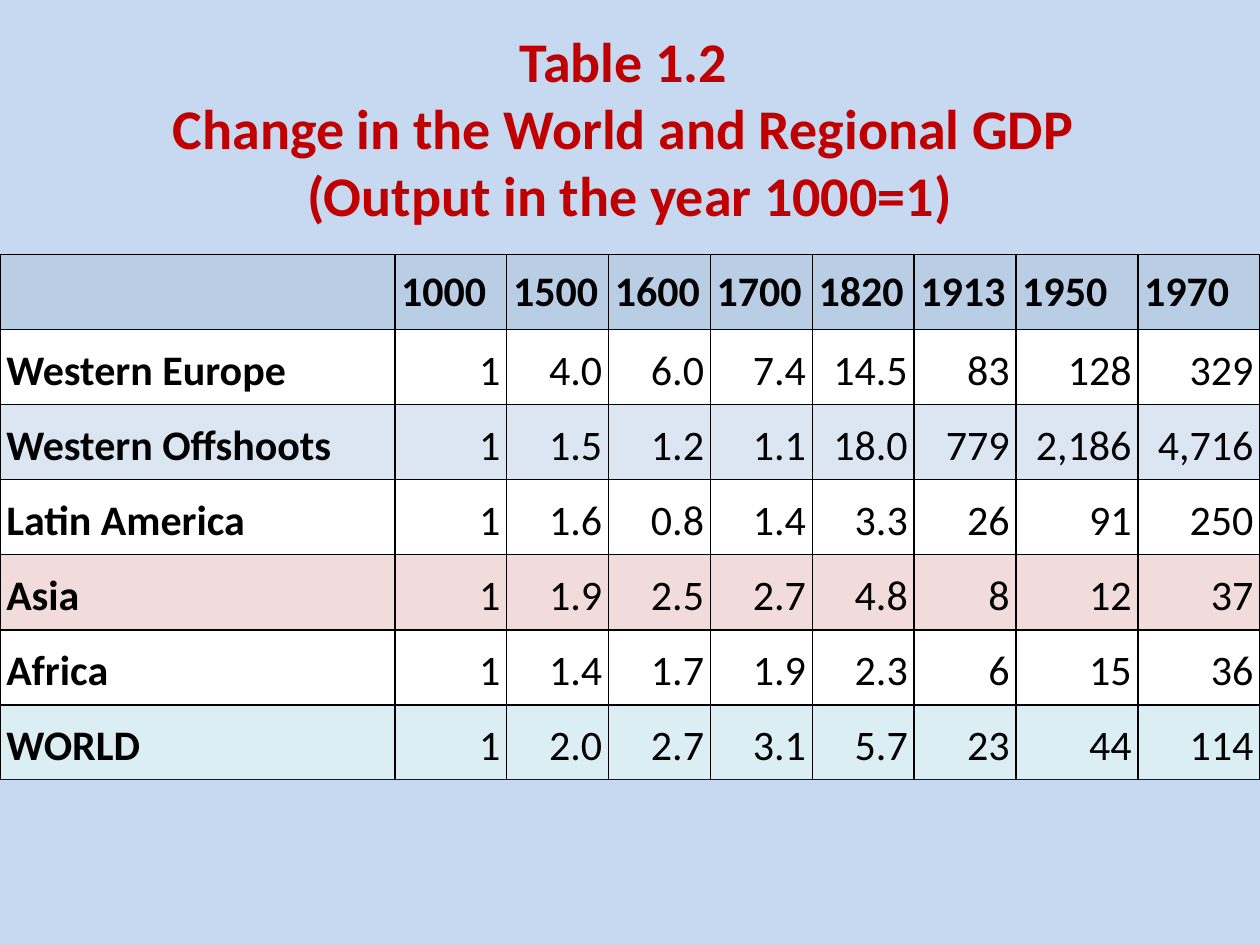
from dataclasses import dataclass

from lxml.etree import SubElement
from pptx import Presentation
from pptx.dml.color import RGBColor
from pptx.enum.shapes import MSO_SHAPE
from pptx.enum.text import MSO_ANCHOR, MSO_AUTO_SIZE, PP_ALIGN
from pptx.oxml.ns import qn
from pptx.util import Inches, Pt

FONT = "Calibri"
COLORS = {
    "panel": "C6D9F1",
    "title": "C00000",
    "text": "000000",
    "border": "000000",
    "header": "B9CDE5",
    "plain": "FFFFFF",
    "offshoots": "DCE6F2",
    "asia": "F2DCDB",
    "world": "DBEEF4",
}

# Slide grid: title band, table, footer band
WIDTH, HEIGHT = Inches(10), Inches(7.5)
TABLE_TOP, TABLE_BOTTOM = Inches(2.02), Inches(6.19)
COLUMN_WEIGHTS = [3.14, 0.89] + [0.81] * 5 + [0.97] * 2

TITLE_LINES = [
    "Table 1.2 ",
    "Change in the World and Regional GDP ",
    "(Output in the year 1000=1)",
]
YEARS = ["1000", "1500", "1600", "1700", "1820", "1913", "1950", "1970"]


@dataclass
class Region:
    name: str
    outputs: list[str]
    color: str = "plain"


REGIONS = [
    Region("Western Europe", ["1", "4.0", "6.0", "7.4", "14.5", "83", "128", "329"]),
    Region("Western Offshoots", ["1", "1.5", "1.2", "1.1", "18.0", "779", "2,186", "4,716"], "offshoots"),
    Region("Latin America", ["1", "1.6", "0.8", "1.4", "3.3", "26", "91", "250"]),
    Region("Asia", ["1", "1.9", "2.5", "2.7", "4.8", "8", "12", "37"], "asia"),
    Region("Africa", ["1", "1.4", "1.7", "1.9", "2.3", "6", "15", "36"]),
    Region("WORLD", ["1", "2.0", "2.7", "3.1", "5.7", "23", "44", "114"], "world"),
]


def paint(fill, color: str) -> None:
    fill.solid()
    fill.fore_color.rgb = RGBColor.from_string(COLORS[color])


def style_font(font, size: float, color: str, bold: bool) -> None:
    font.name, font.size, font.bold = FONT, Pt(size), bold
    font.color.rgb = RGBColor.from_string(COLORS[color])


def add_borders(cell) -> None:
    properties = cell._tc.get_or_add_tcPr()
    for side in ("a:lnL", "a:lnR", "a:lnT", "a:lnB"):
        line = SubElement(properties, qn(side), w=str(Pt(1)))
        solid = SubElement(line, qn("a:solidFill"))
        SubElement(solid, qn("a:srgbClr"), val=COLORS["border"])


def fill_cell(cell, text: str, color: str, bold: bool, align=PP_ALIGN.LEFT, spacing: float = 1.0) -> None:
    add_borders(cell)
    paint(cell.fill, color)
    cell.vertical_anchor = MSO_ANCHOR.MIDDLE
    cell.margin_left = cell.margin_right = Inches(0.05)
    cell.margin_top = cell.margin_bottom = 0
    cell.text = text
    paragraph = cell.text_frame.paragraphs[0]
    paragraph.alignment, paragraph.line_spacing = align, spacing
    style_font(paragraph.font, 24, "text", bold)


def add_title(slide) -> None:
    title = slide.shapes.title
    title.left, title.top, title.width, title.height = 0, 0, WIDTH, TABLE_TOP
    paint(title.fill, "panel")
    frame = title.text_frame
    frame.auto_size = MSO_AUTO_SIZE.NONE
    frame.vertical_anchor = MSO_ANCHOR.MIDDLE
    frame.text = "\v".join(TITLE_LINES)
    paragraph = frame.paragraphs[0]
    paragraph.alignment = PP_ALIGN.CENTER
    style_font(paragraph.font, 32, "title", True)


def add_gdp_table(slide) -> None:
    height = TABLE_BOTTOM - TABLE_TOP
    row_count = len(REGIONS) + 1
    table = slide.shapes.add_table(
        row_count, len(COLUMN_WEIGHTS), 0, TABLE_TOP, WIDTH, height
    ).table
    table.first_row = table.horz_banding = False
    for column, weight in zip(table.columns, COLUMN_WEIGHTS):
        column.width = int(WIDTH * weight / sum(COLUMN_WEIGHTS))
    for row in table.rows:
        row.height = height // row_count

    # Years across the top
    for column, year in enumerate(["", *YEARS]):
        fill_cell(table.cell(0, column), year, "header", True)

    # One row per region
    for row, region in enumerate(REGIONS, start=1):
        fill_cell(table.cell(row, 0), region.name, region.color, True, spacing=1.15)
        for column, output in enumerate(region.outputs, start=1):
            fill_cell(table.cell(row, column), output, region.color, False, PP_ALIGN.RIGHT, 1.15)


def add_footer_band(slide) -> None:
    band = slide.shapes.add_shape(
        MSO_SHAPE.RECTANGLE, 0, TABLE_BOTTOM, WIDTH, HEIGHT - TABLE_BOTTOM
    )
    band.shadow.inherit = False
    paint(band.fill, "panel")
    band.line.fill.background()


def main() -> None:
    presentation = Presentation()
    presentation.slide_width, presentation.slide_height = WIDTH, HEIGHT
    slide = presentation.slides.add_slide(presentation.slide_layouts[5])
    add_title(slide)
    add_gdp_table(slide)
    add_footer_band(slide)
    presentation.save("out.pptx")


if __name__ == "__main__":
    main()
